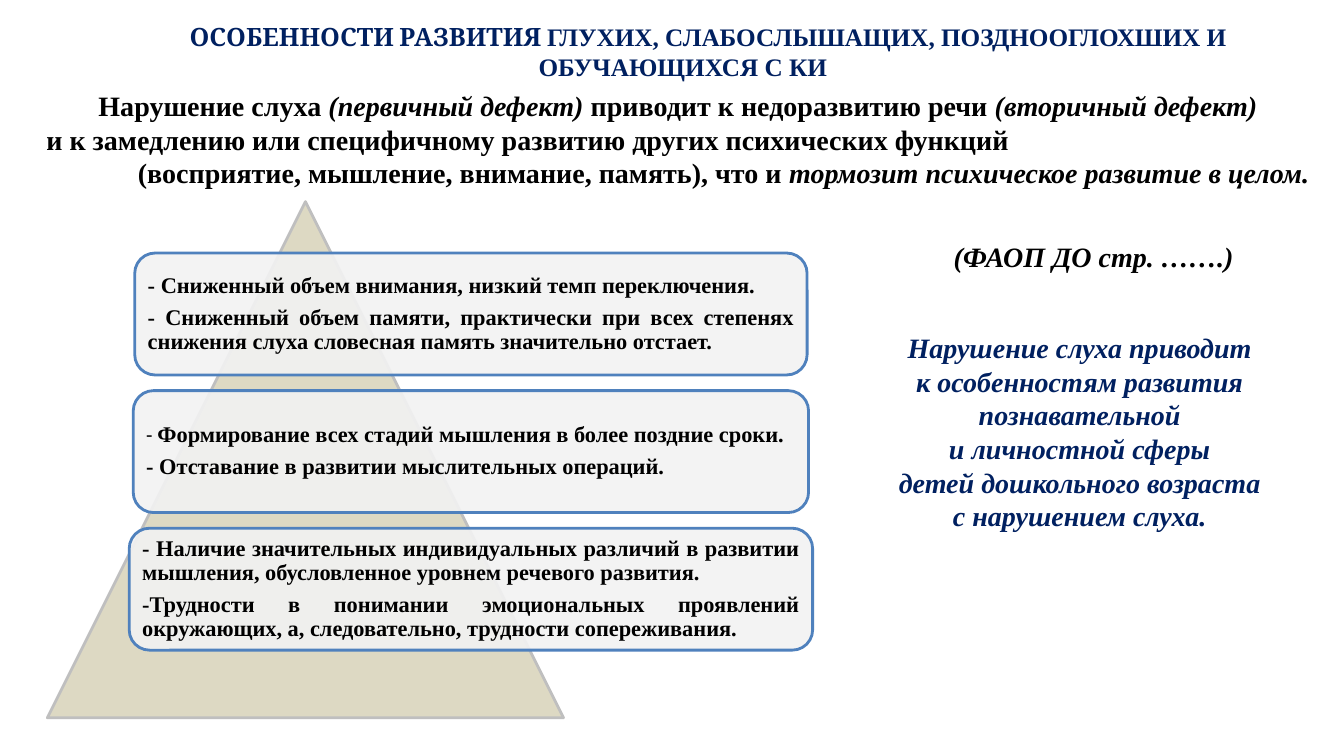
from lxml.etree import SubElement
from pptx import Presentation
from pptx.dml.color import RGBColor
from pptx.enum.shapes import MSO_SHAPE as SHAPE
from pptx.enum.text import MSO_ANCHOR as ANCHOR, MSO_AUTO_SIZE as AUTO, PP_ALIGN as ALIGN
from pptx.oxml.ns import qn
from pptx.util import Emu, Inches, Pt

NAVY = RGBColor(0x00, 0x20, 0x60)
BLACK = RGBColor(0x00, 0x00, 0x00)
SAND = RGBColor(0xDD, 0xD9, 0xC3)
SILVER = RGBColor(0xBF, 0xBF, 0xBF)
PALE = RGBColor(0xF2, 0xF2, 0xF2)
BLUE = RGBColor(0x4F, 0x81, 0xBD)
SERIF = "Times New Roman"


class Deck:
    """Places styled elements by percent of the slide's width and height."""

    def __init__(self):
        self.prs = Presentation()
        self.prs.slide_width, self.prs.slide_height = Inches(13.33), Inches(7.5)
        self.s = self.prs.slides.add_slide(self.prs.slide_layouts[1])

    def box(self, x, y, w, h):
        across, down = self.prs.slide_width / 100, self.prs.slide_height / 100
        return [Emu(round(v)) for v in (x * across, y * down, w * across, h * down)]

    def frame(self, sp, anchor=ANCHOR.TOP):
        tf = sp.text_frame
        tf.word_wrap, tf.auto_size, tf.vertical_anchor = True, AUTO.NONE, anchor
        return tf

    def placeholder(self, index, *place):
        sp = self.s.placeholders[index]
        sp.left, sp.top, sp.width, sp.height = self.box(*place)
        return self.frame(sp)

    def text(self, *place):
        return self.frame(self.s.shapes.add_textbox(*self.box(*place)))

    def shape(self, kind, fill, line, *place, opacity=100):
        sp = self.s.shapes.add_shape(kind, *self.box(*place))
        sp.shadow.inherit = False
        sp.fill.solid()
        sp.fill.fore_color.rgb = fill
        sp.line.color.rgb, sp.line.width = line, Pt(2)
        if opacity < 100:
            color = sp.fill._xPr.find(".//" + qn("a:srgbClr"))
            SubElement(color, qn("a:alpha")).set("val", str(opacity * 1000))
        return sp

    def card(self, paragraphs, *place):
        sp = self.shape(SHAPE.ROUNDED_RECTANGLE, PALE, BLUE, *place, opacity=90)
        tf = self.frame(sp, ANCHOR.MIDDLE)
        tf.margin_left = tf.margin_right = tf.margin_top = tf.margin_bottom = Inches(0.07)
        for runs in paragraphs:
            p = self.paragraph(tf, runs, ALIGN.JUSTIFY, size=16)
            p.line_spacing = 0.9
            if runs is not paragraphs[-1]:
                p.space_after = Pt(5.6)

    def paragraph(self, tf, runs, align=ALIGN.CENTER, size=20, color=BLACK, indent=0):
        """Each run is (text, style), where style overrides font, size, bold or italic."""
        p = tf.paragraphs[0]
        if p.runs:
            p = tf.add_paragraph()
        p.alignment, p.space_before = align, Pt(0)
        pPr = p._p.get_or_add_pPr()
        pPr.set("marL", "0")
        pPr.set("indent", str(Inches(indent)))
        SubElement(pPr, qn("a:buNone"))
        for words, style in runs:
            r = p.add_run()
            r.text = words
            r.font.name = style.get("font", SERIF)
            r.font.size = Pt(style.get("size", size))
            r.font.bold = style.get("bold", True)
            r.font.italic = style.get("italic", False)
            r.font.color.rgb = color
        return p


PLAIN, ITALIC = {}, {"italic": True}

INTRO = [
    (ALIGN.CENTER, [("Нарушение слуха ", PLAIN), ("(первичный дефект) ", ITALIC),
                    ("приводит к недоразвитию речи ", PLAIN), ("(вторичный дефект)", ITALIC)]),
    (ALIGN.LEFT, [("и к замедлению или специфичному развитию других психических функций", PLAIN)]),
    (ALIGN.RIGHT, [("(восприятие, мышление, внимание, память), что и ", PLAIN),
                   ("тормозит психическое развитие в целом.", ITALIC)]),
]

# Card width and its paragraphs
CARDS = [
    (50.03, [
        [("- Сниженный объем внимания, низкий темп переключения.", PLAIN)],
        [("- Сниженный объем памяти, практически при всех степенях снижения слуха "
          "словесная память значительно отстает.", PLAIN)]]),
    (50.25, [
        [("- ", {"font": "Calibri", "size": 15, "bold": False}),
         ("Формирование всех стадий мышления в более поздние сроки.", PLAIN)],
        [("- Отставание в развитии мыслительных операций.", PLAIN)]]),
    (50.85, [
        [("- Наличие значительных индивидуальных различий в развитии мышления, "
          "обусловленное уровнем речевого развития.", PLAIN)],
        [("-Трудности в понимании эмоциональных проявлений окружающих, а, следовательно, "
          "трудности сопереживания.", PLAIN)]]),
]
CARD_CENTER, CARD_TOP, CARD_STEP, CARD_HEIGHT = 35.04, 33.47, 18.2, 16.13

# Conclusion lines and their indents in inches
CONCLUSION = [
    ("Нарушение слуха приводит", 0),
    ("к особенностям развития", -0.07),
    ("познавательной", -0.07),
    ("и личностной сферы", -0.5),
    ("детей дошкольного возраста", -0.15),
    ("с нарушением слуха.", 0),
]


def main():
    deck = Deck()

    # Title
    tf = deck.placeholder(0, 3.3, 2.13, 95.03, 13.47)
    deck.paragraph(tf, [
        ("ОСОБЕННОСТИ РАЗВИТИЯ ", {"font": "Cambria"}),
        ("ГЛУХИХ, СЛАБОСЛЫШАЩИХ, ПОЗДНООГЛОХШИХ И ОБУЧАЮЩИХСЯ С КИ", PLAIN),
    ], size=18, color=NAVY, indent=0.5)

    # Introduction
    tf = deck.placeholder(1, 2.7, 11.07, 95.48, 22)
    for align, runs in INTRO:
        deck.paragraph(tf, runs, align)

    # Pyramid with cards
    deck.shape(SHAPE.ISOSCELES_TRIANGLE, SAND, SILVER, 3.53, 26.67, 38.4, 68.27)
    for i, (width, paragraphs) in enumerate(CARDS):
        deck.card(paragraphs, CARD_CENTER - width / 2, CARD_TOP + i * CARD_STEP,
                  width, CARD_HEIGHT)

    # Conclusion
    tf = deck.text(61.58, 43.07, 37.5, 28)
    for words, indent in CONCLUSION:
        deck.paragraph(tf, [(words, ITALIC)], color=NAVY, indent=indent)

    # Page reference
    tf = deck.text(68.25, 31.07, 26.25, 5.87)
    deck.paragraph(tf, [("(ФАОП ДО стр. …….)", ITALIC)])

    deck.prs.save("out.pptx")


if __name__ == "__main__":
    main()
